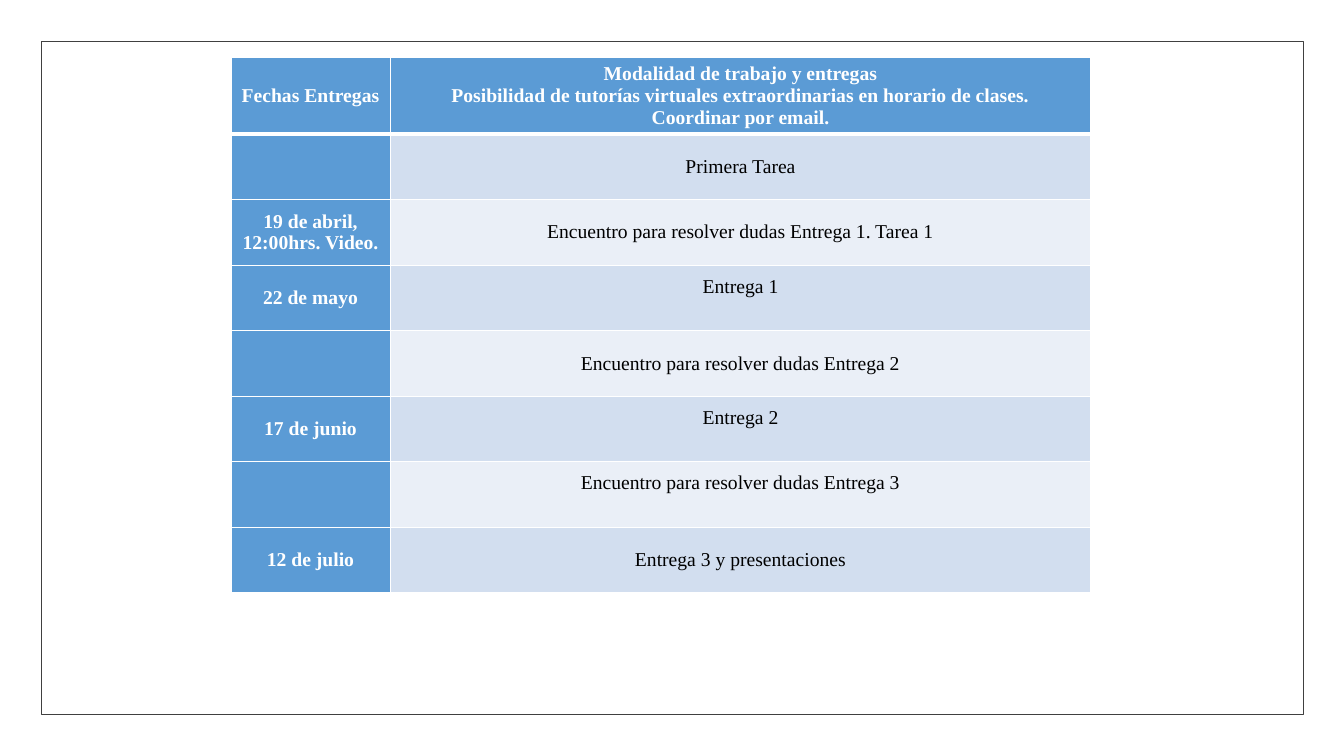
import pptx
import pptx.util
import pptx.dml.color
import pptx.enum.shapes
import pptx.enum.text
import pptx.oxml
import pptx.oxml.ns

Inches, Pt = pptx.util.Inches, pptx.util.Pt
RGB = pptx.dml.color.RGBColor.from_string
COLORS = {"head": "5B9BD5", "odd": "D2DEEF", "even": "EAEFF7",
          "white": "FFFFFF", "black": "000000", "frame": "404040"}
HEADER = ("Fechas Entregas",
          "Modalidad de trabajo y entregas\n"
          "Posibilidad de tutorías virtuales extraordinarias en horario de clases.\n"
          "Coordinar por email.")
DELIVERIES = [
    ("", "Primera Tarea", False),
    ("19 de abril, 12:00hrs. Video.", "Encuentro para resolver dudas Entrega 1. Tarea 1", False),
    ("22 de mayo", "Entrega 1", True),
    ("", "Encuentro para resolver dudas Entrega 2", False),
    ("17 de junio", "Entrega 2", True),
    ("", "Encuentro para resolver dudas Entrega 3", True),
    ("12 de julio", "Entrega 3 y presentaciones", False),
]
COLS = (1.58, 6.95)
HEAD_H, ROW_H = 0.76, 0.65


def add_frame(slide, x, y, w, h):
    """Draw the thin outline around the page."""
    sp = slide.shapes.add_shape(pptx.enum.shapes.MSO_SHAPE.RECTANGLE,
                                Inches(x), Inches(y), Inches(w), Inches(h))
    sp.shadow.inherit = False
    sp.fill.background()
    sp.line.color.rgb = RGB(COLORS["frame"])
    sp.line.width = Pt(0.5)


def set_borders(cell, widths):
    """Give the cell white borders of the widths listed by side."""
    tcPr = cell._tc.get_or_add_tcPr()
    for i, (side, width) in enumerate(widths.items()):
        tcPr.insert(i, pptx.oxml.parse_xml(
            f'<a:ln{side} {pptx.oxml.ns.nsdecls("a")} w="{Pt(width)}"><a:solidFill>'
            f'<a:srgbClr val="{COLORS["white"]}"/></a:solidFill></a:ln{side}>'))


def fill_cell(cell, text, fill, strong, raised=False, top=1, bottom=1):
    """Write and format one table cell."""
    cell.fill.solid()
    cell.fill.fore_color.rgb = RGB(COLORS[fill])
    set_borders(cell, {"L": 1, "R": 1, "T": top, "B": bottom})
    layout = {"vertical_anchor": pptx.enum.text.MSO_ANCHOR.MIDDLE,
              "margin_left": Inches(0.07), "margin_right": Inches(0.07),
              "margin_top": Inches(0.04),
              "margin_bottom": Inches(0.26 if raised else 0.04)}
    for name, value in layout.items():
        setattr(cell, name, value)
    cell.text_frame.text = text
    font = {"name": "Times New Roman", "size": Pt(14), "bold": strong}
    for p in cell.text_frame.paragraphs:
        p.alignment = pptx.enum.text.PP_ALIGN.CENTER
        for r in p.runs:
            for name, value in font.items():
                setattr(r.font, name, value)
            r.font.color.rgb = RGB(COLORS["white" if strong else "black"])


def add_schedule(slide, x, y):
    """Place the table of delivery dates."""
    count = len(DELIVERIES)
    table = slide.shapes.add_table(count + 1, len(COLS), Inches(x), Inches(y),
                                   Inches(sum(COLS)),
                                   Inches(HEAD_H + count * ROW_H)).table
    for col, width in zip(table.columns, COLS):
        col.width = Inches(width)
    for i, row in enumerate(table.rows):
        row.height = Inches(ROW_H if i else HEAD_H)
    for j, text in enumerate(HEADER):
        fill_cell(table.cell(0, j), text, "head", True, bottom=3)
    for i, (date, task, raised) in enumerate(DELIVERIES, 1):
        top = 3 if i == 1 else 1
        fill_cell(table.cell(i, 0), date, "head", True, top=top)
        fill_cell(table.cell(i, 1), task, "odd" if i % 2 else "even", False, raised, top)


def main():
    """Build and save the slide."""
    prs = pptx.Presentation()
    prs.slide_width, prs.slide_height = Inches(13.33), Inches(7.5)
    slide = prs.slides.add_slide(prs.slide_layouts[6])
    add_frame(slide, 0.41, 0.41, 12.52, 6.68)
    add_schedule(slide, 2.29, 0.57)
    prs.save("out.pptx")


if __name__ == "__main__":
    main()
